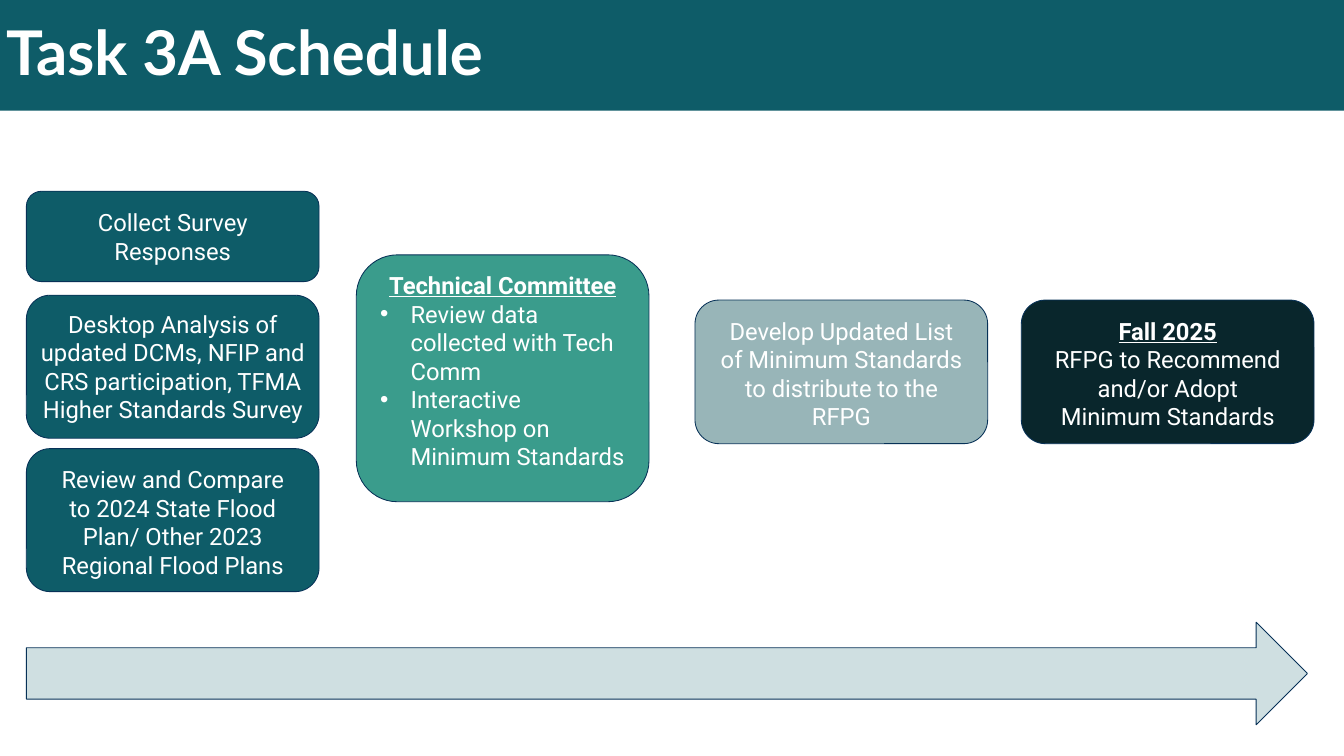
"""Build the Task 3A schedule slide on a grid of 100 columns by 100 rows."""
from lxml.etree import SubElement
from pptx import Presentation
from pptx.dml.color import RGBColor as RGB
from pptx.enum.shapes import MSO_SHAPE as Kind
from pptx.enum.text import MSO_ANCHOR as Anchor, MSO_AUTO_SIZE as Fit, PP_ALIGN as Align
from pptx.oxml.ns import qn
from pptx.util import Inches, Pt

WHITE = RGB(0xFF, 0xFF, 0xFF)
NAVY = RGB(0x07, 0x31, 0x57)
TEAL = RGB(0x0E, 0x5C, 0x68)
GREEN = RGB(0x3A, 0x9C, 0x8C)
GREY = RGB(0x98, 0xB5, 0xB8)
DARK = RGB(0x09, 0x26, 0x2C)
PALE = RGB(0xCF, 0xDF, 0xE1)

deck = Presentation()
deck.slide_width, deck.slide_height = Inches(21.99), Inches(12.37)
slide = deck.slides.add_slide(deck.slide_layouts[6])
col, row = deck.slide_width / 100, deck.slide_height / 100


def draw(kind, x, y, wide, high, fill):
    shape = slide.shapes.add_shape(
        kind, int(x * col), int(y * row), int(wide * col), int(high * row))
    shape.shadow.inherit = False
    shape.fill.solid()
    shape.fill.fore_color.rgb = fill
    shape.line.color.rgb = NAVY
    shape.line.width = Pt(1)
    return shape


def write(para, text, face, size, bold=False, under=False):
    run = para.add_run()
    run.text = text
    font = run.font
    font.name, font.size = face, Pt(size)
    font.bold, font.underline = bold, under
    font.color.rgb = WHITE


LEFT, WIDE = 1.96, 21.78
draw(Kind.RIGHT_ARROW, LEFT, 82.3, 95.32, 13.58, PALE)

band = draw(Kind.RECTANGLE, 0, 0, 100, 14.63, TEAL)
band.line.fill.background()
band.text_frame.vertical_anchor = Anchor.MIDDLE
title = band.text_frame.paragraphs[0]
title.alignment, title.line_spacing = Align.LEFT, 0.9
write(title, "Task 3A Schedule", "Lato", 72.6, bold=True)

cards = [
    (LEFT, 25.3, 11.96, TEAL, 1.32, 1.78, 2,
     [("body", "Collect Survey Responses")]),
    (LEFT, 39.05, 18.92, TEAL, 0, 1.46, 4,
     [("body", "Desktop Analysis of updated DCMs, NFIP and CRS participation, "
               "TFMA Higher Standards Survey")]),
    (LEFT, 59.34, 18.92, TEAL, 1.32, 1.78, 4,
     [("body", "Review and Compare to 2024 State Flood Plan/ Other 2023 "
               "Regional Flood Plans")]),
    (26.51, 33.71, 32.66, GREEN, 1.32, 1.7, 7,
     [("head", "Technical Committee"),
      ("item", "Review data collected with Tech Comm"),
      ("item", "Interactive Workshop on Minimum Standards")]),
    (51.71, 39.69, 19, GREY, 1.32, 1.78, 4,
     [("body", "Develop Updated List of Minimum Standards to distribute to the RFPG")]),
    (75.99, 39.69, 19, DARK, 1.32, 1.78, 4,
     [("head", "Fall 2025"),
      ("body", "RFPG to Recommend and/or Adopt Minimum Standards")]),
]

for x, y, high, fill, side, top, lines, paras in cards:
    draw(Kind.ROUNDED_RECTANGLE, x, y, WIDE, high, fill)
    box = slide.shapes.add_textbox(
        int((x + side) * col), int((y + top) * row),
        int((WIDE - 2 * side) * col), int((0.8 + 3.81 * lines) * row))
    frame = box.text_frame
    frame.word_wrap, frame.auto_size = True, Fit.SHAPE_TO_FIT_TEXT
    for n, (role, text) in enumerate(paras):
        para = frame.add_paragraph() if n else frame.paragraphs[0]
        para.alignment = Align.LEFT if role == "item" else Align.CENTER
        if role == "item":
            props = para._p.get_or_add_pPr()
            props.set("marL", str(Inches(0.5)))
            props.set("indent", str(-Inches(0.5)))
            SubElement(props, qn("a:buFont"), typeface="Arial")
            SubElement(props, qn("a:buChar"), char="•")
        head = role == "head"
        write(para, text, "Roboto", 28, bold=head, under=head)

deck.save("out.pptx")
